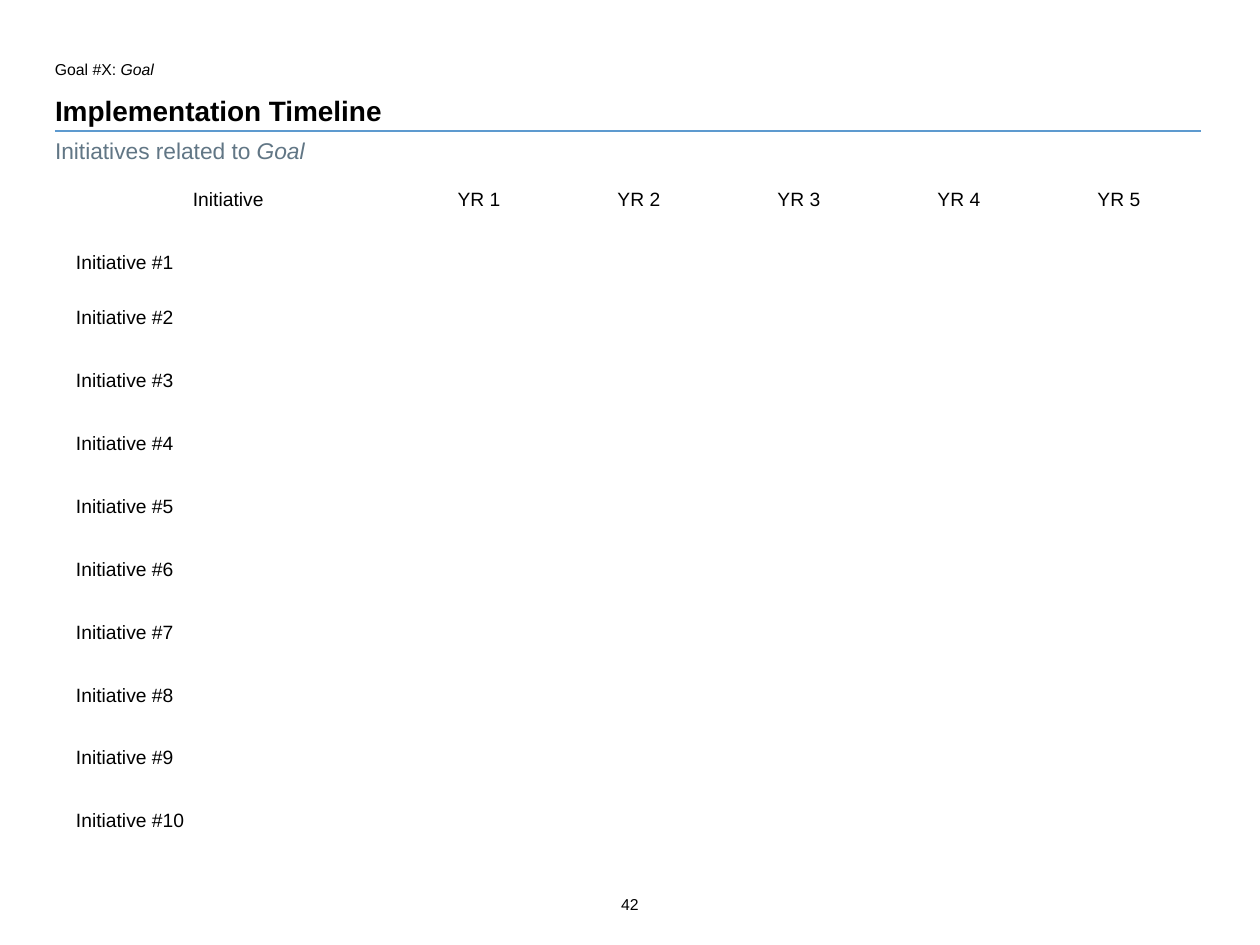
"""Build the implementation timeline slide for one goal."""
from dataclasses import dataclass

from pptx import Presentation
from pptx.dml.color import RGBColor
from pptx.enum.shapes import MSO_CONNECTOR as Connector
from pptx.enum.text import MSO_ANCHOR as Anchor, MSO_AUTO_SIZE as AutoSize, PP_ALIGN as Align
from pptx.oxml.xmlchemy import OxmlElement
from pptx.util import Pt

GOAL_LABEL = [("Goal #X: ", False), ("Goal", True)]
HEADING = [("Implementation Timeline", False)]
SUBHEADING = [("Initiatives related to ", False), ("Goal", True)]
PAGE_NUMBER = [("42", False)]
COLUMNS = ["Initiative "] + [f"YR {year}" for year in range(1, 6)]
INITIATIVES = [f"Initiative #{number}" for number in range(1, 11)]


@dataclass(frozen=True)
class Theme:
    font: str = "Arial"
    ink: str = "000000"
    muted: str = "617685"
    rule: str = "5D9ACF"
    small: int = 9
    body: int = 11
    subheading: int = 13
    heading: int = 16


THEME = Theme()
EMU_PER_PX = 914400 // 126
SLIDE_W, SLIDE_H = 1260, 945
LEFT, CONTENT_W = 55, 1146
RULE_Y = 131
TABLE_LEFT, TABLE_TOP = 63, 168
INITIATIVE_W, YEAR_W, ROW_H = 336, 160, 63


def px(*lengths):
    return [length * EMU_PER_PX for length in lengths]


def write(frame, runs, size, color=THEME.ink, align=Align.LEFT, bold=False):
    paragraph = frame.paragraphs[0]
    paragraph.alignment = align
    for text, italic in runs:
        run = paragraph.add_run()
        run.text = text
        font = run.font
        font.name, font.size = THEME.font, Pt(size)
        font.bold, font.italic = bold, italic
        font.color.rgb = RGBColor.from_string(color)


def set_margins(target, across, down):
    target.margin_left, target.margin_right = px(across, across)
    target.margin_top, target.margin_bottom = px(down, down)


def add_label(slide, box, runs, size, across=0, **style):
    frame = slide.shapes.add_textbox(*px(*box)).text_frame
    frame.word_wrap = True
    set_margins(frame, across, 5)
    write(frame, runs, size, **style)


def add_heading(slide):
    title = slide.shapes.title
    title.left, title.top, title.width, title.height = px(LEFT, 93, CONTENT_W, 34)
    frame = title.text_frame
    frame.auto_size = AutoSize.NONE
    frame.vertical_anchor = Anchor.BOTTOM
    set_margins(frame, 0, 0)
    write(frame, HEADING, THEME.heading, bold=True)


def add_rule(slide):
    rule = slide.shapes.add_connector(
        Connector.STRAIGHT, *px(LEFT, RULE_Y, LEFT + CONTENT_W, RULE_Y))
    rule.line.color.rgb = RGBColor.from_string(THEME.rule)
    rule.line.width = Pt(0.75)
    rule._element.spPr.append(OxmlElement("a:effectLst"))


def add_timeline(slide):
    widths = [INITIATIVE_W] + [YEAR_W] * (len(COLUMNS) - 1)
    row_count = len(INITIATIVES) + 1
    timeline = slide.shapes.add_table(
        row_count, len(COLUMNS),
        *px(TABLE_LEFT, TABLE_TOP, sum(widths), row_count * ROW_H)).table
    timeline.first_row = timeline.horz_banding = False
    for column, width in zip(timeline.columns, px(*widths)):
        column.width = width
    for row in timeline.rows:
        row.height = px(ROW_H)[0]
        for cell in row.cells:
            cell.fill.background()
    for index, name in enumerate(COLUMNS):
        cell = timeline.cell(0, index)
        cell.vertical_anchor = Anchor.MIDDLE
        set_margins(cell, *((18, 9) if index else (13, 13)))
        write(cell.text_frame, [(name, False)], THEME.body, align=Align.CENTER)
    for index, name in enumerate(INITIATIVES, start=1):
        cell = timeline.cell(index, 0)
        cell.vertical_anchor = Anchor.MIDDLE if index == 1 else Anchor.TOP
        set_margins(cell, 13, 13)
        write(cell.text_frame, [(name, False)], THEME.body)


def main():
    deck = Presentation()
    deck.slide_width, deck.slide_height = px(SLIDE_W, SLIDE_H)
    slide = deck.slides.add_slide(deck.slide_layouts[5])
    add_rule(slide)
    add_label(slide, (587, 890, 86, 33), PAGE_NUMBER, THEME.small,
              across=5, align=Align.CENTER)
    add_label(slide, (LEFT, 55, 364, 25), GOAL_LABEL, THEME.small)
    add_heading(slide)
    add_timeline(slide)
    add_label(slide, (LEFT, 132, CONTENT_W, 38), SUBHEADING, THEME.subheading,
              color=THEME.muted)
    deck.save("out.pptx")


if __name__ == "__main__":
    main()
